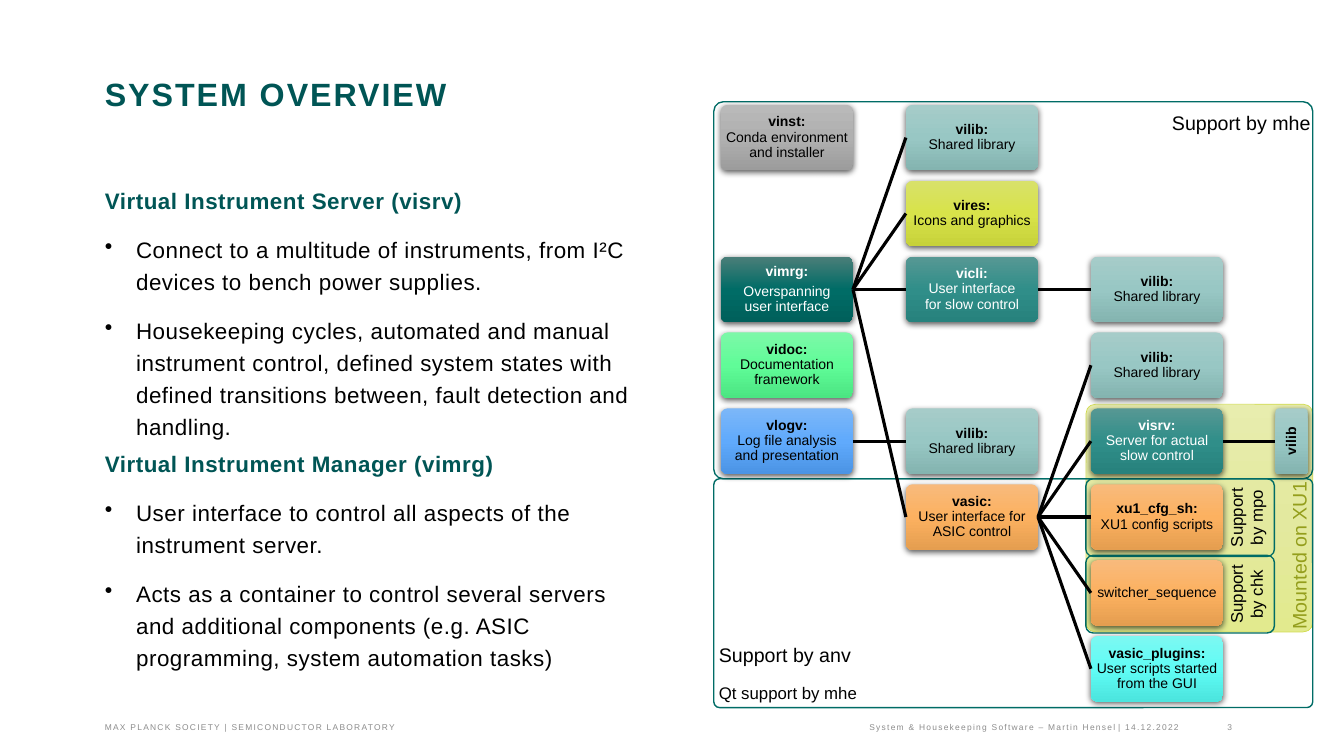
import copy
from dataclasses import dataclass, field

import lxml.etree
import pptx
import pptx.dml.color
import pptx.enum.shapes
import pptx.enum.text
import pptx.oxml.ns
import pptx.shapes.autoshape
import pptx.text.text
import pptx.util

Inches, Pt = pptx.util.Inches, pptx.util.Pt
RGB = pptx.dml.color.RGBColor
Align, Anchor = pptx.enum.text.PP_ALIGN, pptx.enum.text.MSO_ANCHOR
Shape = pptx.shapes.autoshape.Shape
qn = pptx.oxml.ns.qn
Rect = tuple[float, float, float, float]
Ramp = tuple[RGB, RGB, RGB]

BLACK, WHITE = RGB(0, 0, 0), RGB(255, 255, 255)
PINE, TEAL = RGB(0x00, 0x55, 0x55), RGB(0x00, 0x6C, 0x66)
GREY, OLIVE = RGB(0x8C, 0x8C, 0x8C), RGB(0x94, 0x9E, 0x1C)
LIME = RGB(0xD2, 0xDC, 0x51)


def ramp(*codes: str) -> Ramp:
    return tuple(RGB.from_string(code) for code in codes)


YELLOW = ramp("E8EDAE", "E3E99F", "E2EA8E")
ASH = ramp("B9B9B9", "B0B0B0", "9C9C9C")
DEEP = ramp("4B7E79", "006C66", "00605B")
MIST = ramp("A6CCC9", "98C7C4", "84B4B0")
CITRUS = ramp("D8E16A", "D8E34A", "C7D23A")
SEA = ramp("579894", "308E89", "27827D")
ORANGE = ramp("F8BA7C", "FCB160", "E59E50")
CYAN = ramp("7CF8F2", "60FCF5", "4BE5DE")
BLUE = ramp("7CB7F8", "60AAFC", "4B94E5")
GREEN = ramp("7CF8A8", "60FC98", "4BE582")

HEAD = {"size": Pt(16), "bold": True}
BODY = {"size": Pt(16)}
FOOT = {"size": Pt(6)}
TIGHT = {"line_spacing": Pt(23)}
MID = {"alignment": Align.CENTER}
RIGHT = {"alignment": Align.RIGHT}
LOW = {"vertical_anchor": Anchor.BOTTOM}
LOOSE = {"word_wrap": False}
GAP = Pt(11.5)


@dataclass
class Text:
    at: Rect
    lines: list[str]
    font: dict
    ink: RGB = BLACK
    para: dict = field(default_factory=dict)
    frame: dict = field(default_factory=dict)
    track: int = 0  # hundredths of a point
    dots: bool = False
    vert: bool = False
    turn: float = 0


@dataclass
class Panel:
    at: Rect
    curve: float
    line: RGB = TEAL
    width: float = 1
    fill: Ramp | None = None


@dataclass
class Node:
    key: str
    col: int
    row: int
    fill: Ramp
    name: str
    note: str = ""
    ink: RGB = BLACK
    split: bool = False


TEXTS = [
    Text((1.04, .76, 11.26, 1.05), ["SYSTEM OVERVIEW"], {"size": Pt(23), "bold": True}, PINE,
         {"line_spacing": Pt(26)}, track=140),
    Text((1.04, 1.8, 5.31, .49), ["Virtual Instrument Server (visrv)"], HEAD, PINE, TIGHT, track=40),
    Text((1.04, 2.29, 5.31, 2.12), [
        "Connect to a multitude of instruments, from I²C devices to bench power supplies.",
        "Housekeeping cycles, automated and manual instrument control, defined system states "
        "with defined transitions between, fault detection and handling."],
        BODY, para=TIGHT, track=40, dots=True),
    Text((1.04, 4.41, 5.31, .49), ["Virtual Instrument Manager (vimrg)"], HEAD, PINE, TIGHT, track=40),
    Text((1.04, 4.9, 5.31, 2.12), [
        "User interface to control all aspects of the instrument server.",
        "Acts as a container to control several servers and additional components "
        "(e.g. ASIC programming, system automation tasks)"],
        BODY, para=TIGHT, track=40, dots=True),
    Text((1.04, 7.06, 2.93, .2), ["MAX PLANCK SOCIETY | SEMICONDUCTOR LABORATORY"], FOOT, GREY,
         frame=LOW | LOOSE, track=90),
    Text((3.97, 7.06, 7.09, .2), ["System & Housekeeping Software – Martin Hensel"], FOOT, GREY,
         RIGHT, LOW, 90),
    Text((11.09, 7.06, .05, .2), ["|"], FOOT, GREY, frame=LOW, track=90),
    Text((11.16, 7.06, .61, .2), ["14.12.2022"], FOOT, GREY, frame=LOW, track=90),
    Text((11.86, 7.06, .44, .2), ["3"], FOOT, GREY, RIGHT, LOW | {"margin_right": Inches(.08)}, 90),
    Text((11.62, 1.01, 1.38, .29), ["Support by mhe"], {"size": Pt(14)}, para=TIGHT | RIGHT, frame=LOOSE),
    Text((12.14, 5.38, 1.49, .24), ["Mounted on XU1"], {"size": Pt(14)}, OLIVE, turn=270),
    *(Text((12.16, top, .4, .77), [f"Support by {who}"], {"size": Pt(12)}, para=MID, vert=True)
      for top, who in ((4.75, "mpo"), (5.51, "chk"))),
]
ANV = Text((7.13, 6.29, 1.38, .69), ["Support by anv", "Qt support by mhe"], {"size": Pt(14)},
           para=TIGHT, frame=LOOSE)

PANELS = [
    Panel((10.77, 4.01, 2.25, 2.26), .043, LIME, .5, YELLOW),
    Panel((7.08, 4.75, 5.94, 2.27), .025),
    Panel((7.08, 1.01, 5.94, 3.74), .025),
    *(Panel((10.77, top, 1.87, .77), .093) for top in (4.75, 5.51)),
]

LIB = ("vilib:", "Shared library")
NODES = [
    Node("vinst", 0, 0, ASH, "vinst:", "Conda environment and installer"),
    Node("vimrg", 0, 2, DEEP, "vimrg:", "Overspanning\nuser interface", WHITE, True),
    Node("vidoc", 0, 3, GREEN, "vidoc:", "Documentation framework"),
    Node("vlogv", 0, 4, BLUE, "vlogv:", "Log file analysis and presentation"),
    Node("lib top", 1, 0, MIST, *LIB),
    Node("vires", 1, 1, CITRUS, "vires:", "Icons and graphics"),
    Node("vicli", 1, 2, SEA, "vicli:", "User interface\nfor slow control", WHITE),
    Node("lib log", 1, 4, MIST, *LIB),
    Node("vasic", 1, 5, ORANGE, "vasic:", "User interface for\nASIC control"),
    Node("lib cli", 2, 2, MIST, *LIB),
    Node("lib asic", 2, 3, MIST, *LIB),
    Node("visrv", 2, 4, SEA, "visrv:", "Server for actual slow control", WHITE),
    Node("config", 2, 5, ORANGE, "xu1_cfg_sh:", "XU1 config scripts"),
    Node("switch", 2, 6, ORANGE, "", "switcher_sequence"),
    Node("plugins", 2, 7, CYAN, "vasic_plugins:", "User scripts started from the GUI"),
    Node("lib srv", 3, 4, MIST, "vilib"),
]
LINKS = {
    "vimrg": ["lib top", "vires", "vicli", "vasic"],
    "vicli": ["lib cli"],
    "vlogv": ["lib log"],
    "vasic": ["lib asic", "visrv", "config", "switch", "plugins"],
    "visrv": ["lib srv"],
}

deck = pptx.Presentation()
deck.slide_width, deck.slide_height = Inches(13.33), Inches(7.5)
shapes = deck.slides.add_slide(deck.slide_layouts[6]).shapes


def put(thing: object, values: dict) -> None:
    for name, value in values.items():
        setattr(thing, name, value)


def setup(frame: pptx.text.text.TextFrame, pad: float, values: dict, vert: bool) -> None:
    sides = ("left", "right", "top", "bottom")
    put(frame, {f"margin_{side}": Inches(pad) for side in sides} | {"word_wrap": True} | values)
    if vert:
        frame._txBody.bodyPr.set("vert", "vert270")


def write(para, text: str, font: dict, ink: RGB, track: int = 0) -> None:
    """Add text to a paragraph, with a line break at each newline."""
    for i, part in enumerate(text.split("\n")):
        run = para.add_run()
        run.text = part
        put(run.font, {"name": "Arial"} | font)
        run.font.color.rgb = ink
        props = run._r.get_or_add_rPr()
        if track:
            props.set("spc", str(track))
        if i:
            para.add_line_break()
            gap = para._p[-1]
            gap.append(copy.deepcopy(props))
            run._r.addprevious(gap)


def dot(para) -> None:
    props = para._p.get_or_add_pPr()
    props.set("marL", str(Inches(.31)))
    props.set("indent", str(Inches(-.31)))
    lxml.etree.SubElement(props, qn("a:buChar"), char="•")


def label(item: Text) -> pptx.text.text.TextFrame:
    box = shapes.add_textbox(*map(Inches, item.at))
    box.rotation = item.turn
    frame = box.text_frame
    setup(frame, 0, item.frame, item.vert)
    for i, line in enumerate(item.lines):
        para = frame.add_paragraph() if i else frame.paragraphs[0]
        if item.dots:
            dot(para)
        put(para, item.para | ({"space_before": GAP} if i else {}))
        write(para, line, item.font, item.ink, item.track)
    return frame


def plate(at: Rect, curve: float, fill: Ramp | None) -> Shape:
    """Add a rounded box with a top-to-bottom gradient or no fill."""
    shape = shapes.add_shape(pptx.enum.shapes.MSO_SHAPE.ROUNDED_RECTANGLE, *map(Inches, at))
    shape.adjustments[0] = curve
    shape.shadow.inherit = False
    if not fill:
        shape.fill.background()
        return shape
    shape.fill.gradient()
    shape.fill.gradient_angle = 270
    stops = shape._element.spPr.find(".//" + qn("a:gsLst"))
    stops.insert(1, copy.deepcopy(stops[0]))
    for i, (stop, color) in enumerate(zip(shape.fill.gradient_stops, fill)):
        stop.position = i / 2
        stop.color.rgb = color
    return shape


def shade(shape: Shape) -> None:
    effects = shape._element.spPr.find(qn("a:effectLst"))
    shadow = lxml.etree.SubElement(effects, qn("a:outerShdw"), blurRad=str(Pt(4.5)),
                                   dist=str(Pt(1.5)), dir="5400000", rotWithShape="0")
    color = lxml.etree.SubElement(shadow, qn("a:srgbClr"), val="000000")
    lxml.etree.SubElement(color, qn("a:alpha"), val="63000")


def block(node: Node) -> Shape:
    slim = node.col == 3
    left = 12.65 if slim else 7.15 + node.col * 3.67 / 2
    shape = plate((left, 1.04 + node.row * 5.27 / 7, .32 if slim else 1.31, .65), .1, node.fill)
    shape.line.fill.background()
    shade(shape)
    frame = shape.text_frame
    setup(frame, .03, {"vertical_anchor": Anchor.MIDDLE}, slim)
    form = MID | {"line_spacing": .9}
    para = frame.paragraphs[0]
    put(para, form)
    size = {"size": Pt(10)}
    if node.name:
        joint = "\n" if node.note and not node.split else ""
        write(para, node.name + joint, size | {"bold": True}, node.ink)
    if node.split:
        para.space_after = Pt(3.5)
        para = frame.add_paragraph()
        put(para, form)
    if node.note:
        write(para, node.note, size | {"bold": False}, node.ink)
    return shape


def link(start: Shape, end: Shape) -> None:
    line = shapes.add_connector(pptx.enum.shapes.MSO_CONNECTOR.STRAIGHT, 0, 0, 0, 0)
    line.begin_connect(start, 3)
    line.end_connect(end, 1)
    line.line.color.rgb = BLACK
    line.line.width = Pt(2.25)
    lxml.etree.SubElement(line._element.spPr, qn("a:effectLst"))


def main() -> None:
    for panel in PANELS:
        shape = plate(panel.at, panel.curve, panel.fill)
        shape.line.color.rgb = panel.line
        shape.line.width = Pt(panel.width)
    blocks = {node.key: block(node) for node in NODES}
    for start, ends in LINKS.items():
        for end in ends:
            link(blocks[start], blocks[end])
    for item in TEXTS:
        label(item)
    small = label(ANV).paragraphs[1]
    small.line_spacing = 1.0
    small.runs[0].font.size = Pt(12)
    deck.save("out.pptx")


if __name__ == "__main__":
    main()
